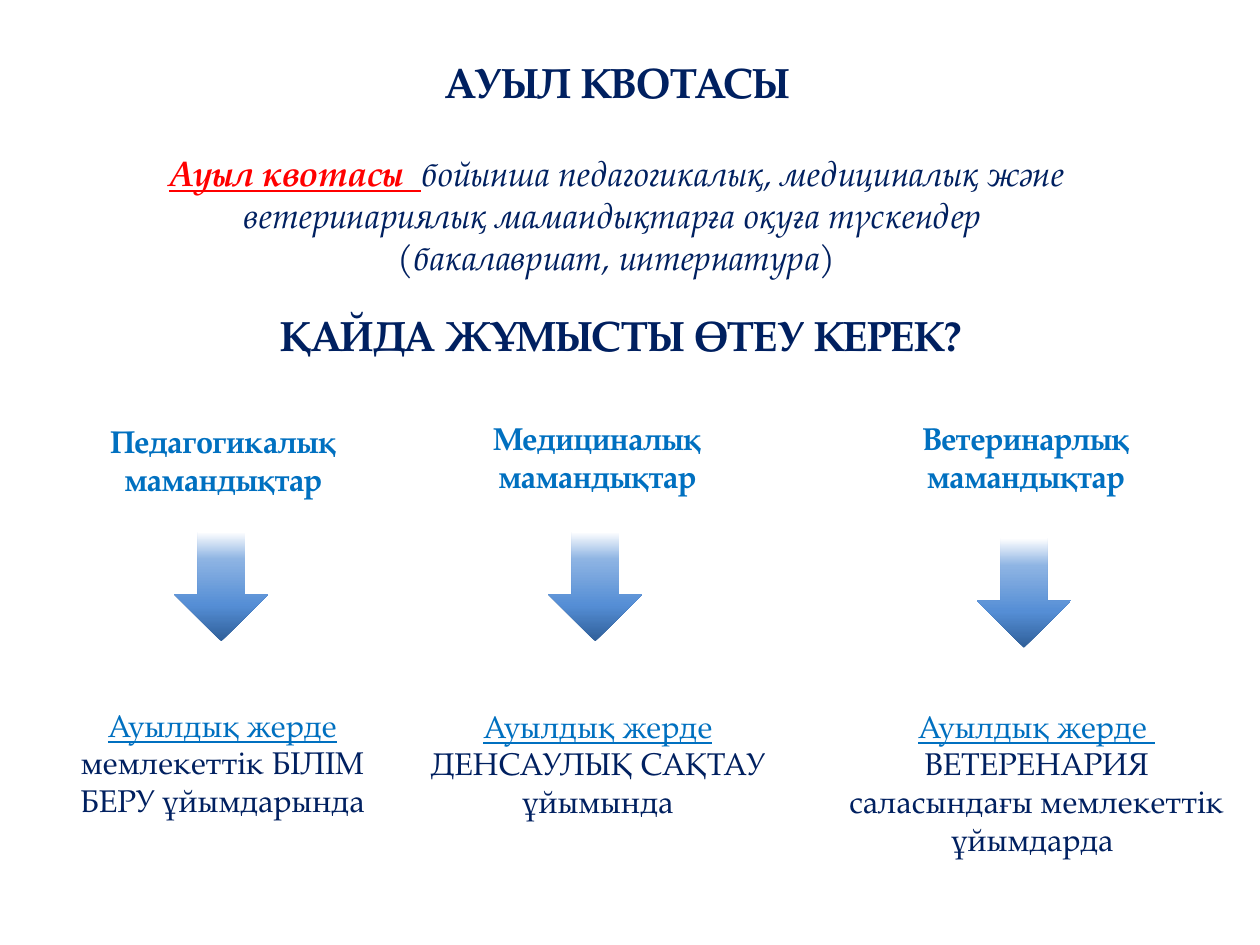
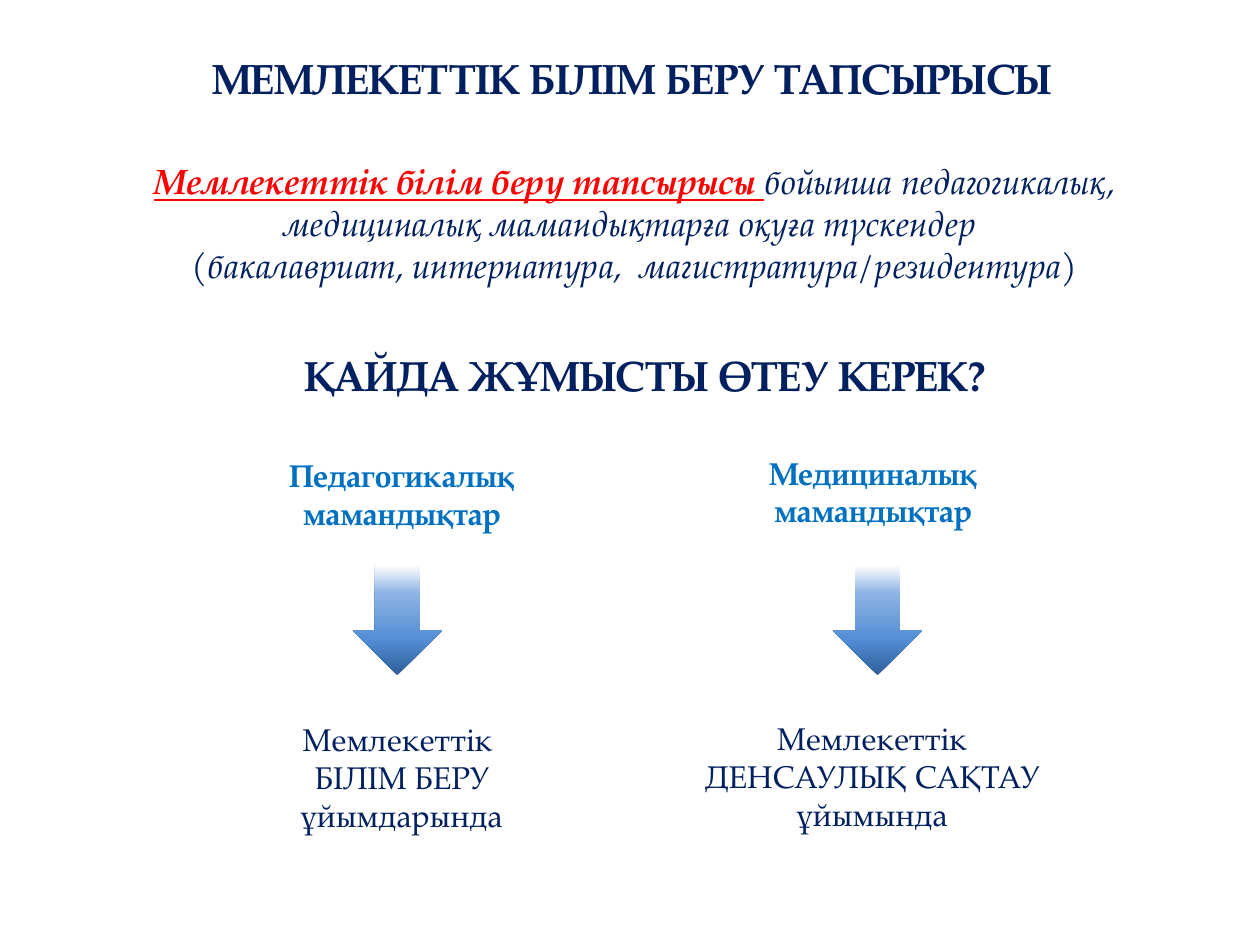
from lxml import etree
from pptx import Presentation
from pptx.dml.color import RGBColor
from pptx.enum import shapes, text
from pptx.oxml import ns
from pptx.util import Cm, Pt

NAVY = RGBColor(0x00, 0x20, 0x60)
BLUE = RGBColor(0x00, 0x70, 0xC0)
RED = RGBColor(0xFF, 0x00, 0x00)
ARROW_STOPS = [
    (0, RGBColor(0x2F, 0x5F, 0x99)),
    (33, RGBColor(0x55, 0x8E, 0xD5)),
    (75, RGBColor(0x8E, 0xB4, 0xE3)),
    (100, RGBColor(0xFF, 0xFF, 0xFF)),
]
FONT = "TeX Gyre Pagella"
HEADING = {"size": Pt(24), "bold": True}
TERM = {"size": Pt(20), "bold": True, "italic": True, "underline": True}
INTRO = {"size": Pt(20), "italic": True}
LABEL = {"size": Pt(18), "bold": True}
BODY = {"size": Pt(18)}
PLACE = {"size": Pt(18), "underline": True}
QUESTION = "ҚАЙДА ЖҰМЫСТЫ ӨТЕУ КЕРЕК?"
RURAL = "Ауылдық жерде"
PEDAGOGY = "Педагогикалық мамандықтар"
MEDICINE = "Медициналық мамандықтар"


class Deck:
    def __init__(self):
        self.prs = Presentation()
        self.prs.slide_width, self.prs.slide_height = Cm(25.4), Cm(19.05)
        self.s = None

    def slide(self):
        self.s = self.prs.slides.add_slide(self.prs.slide_layouts[6])

    def run(self, p, content, color, style):
        for i, line in enumerate(content.split("\n")):
            if i:
                p.add_line_break()
            if line:
                r = p.add_run()
                r.text = line
                r.font.name = FONT
                r.font.color.rgb = color
                for name, value in style.items():
                    setattr(r.font, name, value)

    def text(self, box, paragraphs, **frame):
        sp = self.s.shapes.add_textbox(*map(Cm, box))
        tf = sp.text_frame
        settings = {"word_wrap": True, "auto_size": text.MSO_AUTO_SIZE.SHAPE_TO_FIT_TEXT}
        for name, value in {**settings, **frame}.items():
            setattr(tf, name, value)
        for i, runs in enumerate(paragraphs):
            p = tf.add_paragraph() if i else tf.paragraphs[0]
            if tf.word_wrap:
                p.alignment = text.PP_ALIGN.CENTER
            for content, color, style in runs:
                self.run(p, content, color, style)

    def title(self, left, top, width, content):
        self.text((left, top, width, 1.27), [[(content, NAVY, HEADING)]],
                  vertical_anchor=text.MSO_ANCHOR.MIDDLE)

    def intro(self, left, top, width, term, *lines):
        paragraphs = [[(line, NAVY, INTRO)] for line in lines]
        paragraphs[0].insert(0, (term, RED, TERM))
        self.text((left, top, width, 2.82), paragraphs)

    def question(self, left, top, width):
        self.text((left, top, width, 1.27), [[(QUESTION, NAVY, HEADING)]], word_wrap=False)

    def label(self, left, top, content):
        self.text((left, top, 6.4, 1.8), [[(content, BLUE, LABEL)]])

    def arrow(self, left, top, width):
        sp = self.s.shapes.add_shape(shapes.MSO_SHAPE.DOWN_ARROW,
                                     Cm(left), Cm(top), Cm(width), Cm(2.21))
        sp.shadow.inherit = False
        sp.line.fill.background()
        sp.fill.gradient()
        sp.fill.gradient_angle = 90
        stops = sp._element.spPr.find(".//" + ns.qn("a:gsLst"))
        for old in list(stops):
            stops.remove(old)
        for percent, color in ARROW_STOPS:
            stop = etree.SubElement(stops, ns.qn("a:gs"), pos=str(percent * 1000))
            etree.SubElement(stop, ns.qn("a:srgbClr"), val=str(color))


def rural_quota(deck):
    deck.slide()
    deck.title(7.52, 1.02, 9.83, "АУЫЛ КВОТАСЫ")
    deck.intro(1.73, 2.92, 21.41, "Ауыл квотасы  ",
               "бойынша педагогикалық, медициналық және ветеринариялық "
               "мамандықтарға оқуға түскендер ",
               "(бакалавриат, интернатура)")
    deck.question(5.41, 6.12, 15.88)
    columns = [
        (1.3, 8.38, 10.72, PEDAGOGY, (0.89, 14.1, 7.19, 2.57),
         [[(RURAL + " ", BLUE, PLACE), ("мемлекеттік БІЛІМ БЕРУ ұйымдарында", NAVY, BODY)]]),
        (8.84, 8.33, 10.72, MEDICINE, (8.36, 14.12, 7.39, 2.57),
         [[(RURAL + "\n", BLUE, PLACE), ("ДЕНСАУЛЫҚ САҚТАУ ұйымында", NAVY, BODY)]]),
        (17.48, 8.33, 10.85, "Ветеринарлық мамандықтар", (16.59, 14.12, 8.61, 3.33),
         [[(RURAL + " ", BLUE, PLACE)],
          [("ВЕТЕРЕНАРИЯ саласындағы мемлекеттік ұйымдарда ", NAVY, BODY)]]),
    ]
    for left, label_top, arrow_top, label, box, answer in columns:
        deck.label(left, label_top, label)
        deck.arrow(left + 2.21, arrow_top, 1.9)
        deck.text(box, answer)


def state_order(deck):
    deck.slide()
    deck.title(2.34, 0.94, 20.8, " МЕМЛЕКЕТТІК БІЛІМ БЕРУ ТАПСЫРЫСЫ ")
    deck.intro(0.89, 3.1, 23.8, "Мемлекеттік білім беру тапсырысы ",
               "бойынша педагогикалық, медициналық мамандықтарға оқуға түскендер \n"
               "(бакалавриат, интернатура,  магистратура/резидентура)")
    deck.question(5.89, 6.93, 15.98)
    columns = [
        (4.9, 9.07, 7.11, PEDAGOGY, (4.9, 14.4, 6.4, 2.57),
         ["Мемлекеттік ", "БІЛІМ БЕРУ ұйымдарында"]),
        (14.4, 9.02, 16.79, MEDICINE, (13.89, 14.38, 7.39, 2.57),
         ["Мемлекеттік ДЕНСАУЛЫҚ САҚТАУ ұйымында"]),
    ]
    for left, label_top, arrow_left, label, box, lines in columns:
        deck.label(left, label_top, label)
        deck.arrow(arrow_left, 11.4, 1.8)
        deck.text(box, [[(line, NAVY, BODY)] for line in lines])


def main():
    deck = Deck()
    rural_quota(deck)
    state_order(deck)
    deck.prs.save("out.pptx")


if __name__ == "__main__":
    main()
